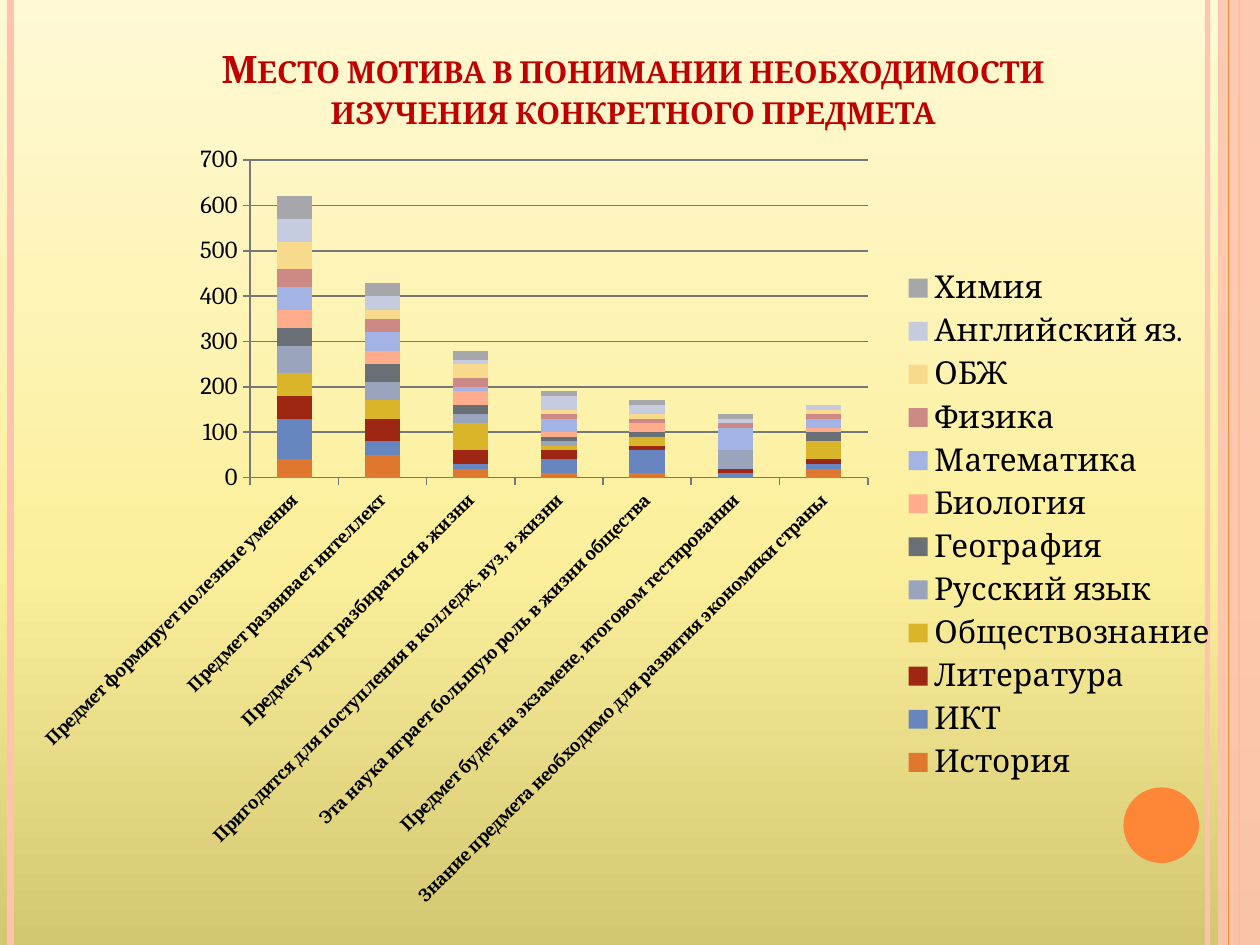
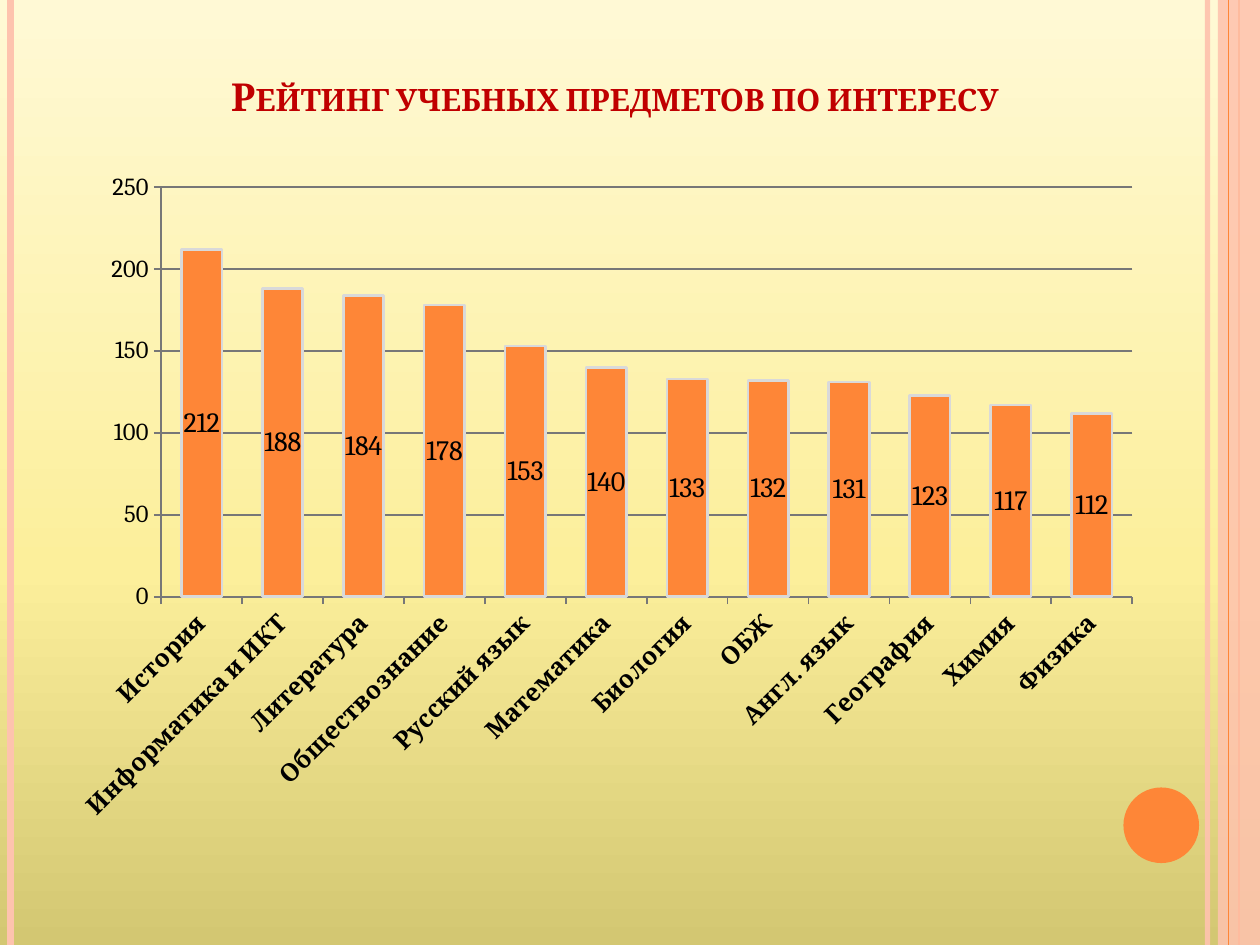
from copy import deepcopy

from pptx import Presentation
from pptx.chart.data import CategoryChartData
from pptx.dml.color import RGBColor
from pptx.enum.chart import XL_CHART_TYPE, XL_LEGEND_POSITION, XL_TICK_MARK
from pptx.enum.shapes import MSO_CONNECTOR, MSO_SHAPE
from pptx.enum.text import MSO_ANCHOR, PP_ALIGN
from pptx.oxml import parse_xml
from pptx.oxml.ns import qn
from pptx.util import Pt

STACKED = XL_CHART_TYPE.COLUMN_STACKED
LEGEND_RIGHT = XL_LEGEND_POSITION.RIGHT
TICK_OUTSIDE = XL_TICK_MARK.OUTSIDE
STRAIGHT = MSO_CONNECTOR.STRAIGHT
RECTANGLE, OVAL = MSO_SHAPE.RECTANGLE, MSO_SHAPE.OVAL
BOTTOM, CENTER = MSO_ANCHOR.BOTTOM, PP_ALIGN.CENTER

WIDTH, HEIGHT = 720, 540
FONT = "Cambria"
ORANGE, PEACH, RED, BLACK = "FE8637", "FEC3AE", "C00000", "000000"
GRID, BAR_EDGE = "777777", "D9D9D9"
BACKGROUND = [(0, "D3C772"), (0.4, "FCEF9B"), (1, "FFF9D5")]
CHART_NAMESPACE = "http://schemas.openxmlformats.org/drawingml/2006/chart"

MOTIVES = [
    "Предмет формирует полезные умения",
    "Предмет развивает интеллект",
    "Предмет учит разбираться в жизни",
    "Пригодится для поступления в колледж, вуз, в жизни",
    "Эта наука играет большую роль в жизни общества",
    "Предмет будет на экзамене, итоговом тестировании",
    "Знание предмета необходимо для развития экономики страны",
]
MOTIVE_SERIES = [
    ("История", [40, 50, 20, 10, 10, 0, 20], "E0772F"),
    ("ИКТ", [90, 30, 10, 30, 50, 10, 10], "6786BF"),
    ("Литература", [50, 50, 30, 20, 10, 10, 10], "9E2714"),
    ("Обществознание", [50, 40, 60, 10, 20, 0, 40], "DAB52A"),
    ("Русский язык", [60, 40, 20, 10, 0, 40, 0], "9AA5BD"),
    ("География", [40, 40, 20, 10, 10, 0, 20], "6A6E75"),
    ("Биология", [40, 30, 30, 10, 20, 0, 10], "FFAC8C"),
    ("Математика", [50, 40, 10, 30, 0, 50, 20], "A3B4E4"),
    ("Физика", [40, 30, 20, 10, 10, 10, 10], "CC8985"),
    ("ОБЖ", [60, 20, 30, 10, 10, 0, 10], "F7DA8C"),
    ("Английский яз.", [50, 30, 10, 30, 20, 10, 10], "C5CCE0"),
    ("Химия", [50, 30, 20, 10, 10, 10, 0], "A5A7AB"),
]
RATING = {
    "История": 212, "Информатика и ИКТ": 188, "Литература": 184,
    "Обществознание": 178, "Русский язык": 153, "Математика": 140,
    "Биология": 133, "ОБЖ": 132, "Англ. язык": 131,
    "География": 123, "Химия": 117, "Физика": 112,
}


def color(value):
    return RGBColor.from_string(value)


def apply(target, formats):
    for name, value in formats.items():
        setattr(target, name, value)


def set_font(font, size, bold=False, value=BLACK):
    apply(font, {"name": FONT, "size": Pt(size), "bold": bold})
    font.color.rgb = color(value)


def set_line(line, value, width):
    line.fill.solid()
    line.fill.fore_color.rgb = color(value)
    line.width = Pt(width)


def set_alpha(fill, percent):
    fill.fore_color.rgb = color(PEACH)
    tint = fill._xPr.find(".//" + qn("a:srgbClr"))
    tint.makeelement
    alpha = tint.makeelement(qn("a:alpha"), {"val": str(percent * 1000)})
    tint.append(alpha)


def add_vertical_line(slide, left, value, width):
    line = slide.shapes.add_connector(STRAIGHT, Pt(left), 0, Pt(left), Pt(HEIGHT))
    set_line(line.line, value, width)
    properties = line.element.spPr
    properties.append(properties.makeelement(qn("a:effectLst"), {}))
    return line


def add_plain_shape(slide, kind, box, value):
    shape = slide.shapes.add_shape(kind, *map(Pt, box))
    shape.shadow.inherit = False
    shape.fill.solid()
    shape.fill.fore_color.rgb = color(value)
    shape.line.fill.background()
    return shape


def paint_background(master):
    fill = master.background.fill
    fill.gradient()
    fill.gradient_angle = 90
    stop_list = master.element.find(".//" + qn("a:gsLst"))
    stop_list.append(deepcopy(stop_list[-1]))
    for stop, (position, value) in zip(fill.gradient_stops, BACKGROUND):
        stop.position = position
        stop.color.rgb = color(value)


def decorate_master(master, slide):
    paint_background(master)
    inner_line = add_vertical_line(slide, 690, PEACH, 3)
    set_alpha(inner_line.line.fill, 93)
    left_line = add_vertical_line(slide, 6, PEACH, 4.5)
    edge_line = add_vertical_line(slide, 708, ORANGE, 1.5)
    band = add_plain_shape(slide, RECTANGLE, (696, 0, 24, HEIGHT), PEACH)
    set_alpha(band.fill, 87)
    band_line = add_vertical_line(slide, 702, ORANGE, 0.75)
    circle = add_plain_shape(slide, OVAL, (642, 450, 43.2, 43.2), ORANGE)
    decorations = [inner_line, left_line, edge_line, band, band_line, circle]
    for index, shape in enumerate(decorations):
        shape.element.find(".//" + qn("p:cNvPr")).set("id", str(100 + index))
        master.element.cSld.spTree.insert(2 + index, shape.element)


def place_title(slide, box, text, size, side_margin, bottom_margin):
    title = slide.shapes.title
    apply(title, dict(zip(("left", "top", "width", "height"), map(Pt, box))))
    frame = title.text_frame
    frame.text = text
    apply(frame, {
        "word_wrap": True, "vertical_anchor": BOTTOM,
        "margin_left": Pt(side_margin), "margin_right": Pt(side_margin),
        "margin_bottom": Pt(bottom_margin),
    })
    paragraph = frame.paragraphs[0]
    apply(paragraph, {"alignment": CENTER, "line_spacing": 0.9})
    run = paragraph.runs[0]
    set_font(run.font, size, True, RED)
    run.font._element.set("cap", "small")


def set_plot_box(chart, box):
    plot_area = chart._chartSpace.find(".//" + qn("c:plotArea"))
    for layout in plot_area.findall(qn("c:layout")):
        plot_area.remove(layout)
    modes = "".join(f'<c:{axis}Mode val="edge"/>' for axis in "xy")
    sizes = "".join(f'<c:{name} val="{value}"/>' for name, value in zip("xywh", box))
    plot_area.insert(0, parse_xml(
        f'<c:layout xmlns:c="{CHART_NAMESPACE}"><c:manualLayout>'
        f'<c:layoutTarget val="inner"/>{modes}{sizes}'
        '</c:manualLayout></c:layout>'))


def format_axes(chart, category_size, maximum, step):
    for axis, size, bold in ((chart.category_axis, category_size, True),
                             (chart.value_axis, 14, False)):
        axis.major_tick_mark = TICK_OUTSIDE
        set_font(axis.tick_labels.font, size, bold)
        set_line(axis.format.line, GRID, 1)
    labels = chart.category_axis._element.find(qn("c:txPr"))
    labels.find(qn("a:bodyPr")).set("rot", "-2700000")
    apply(chart.value_axis, {"minimum_scale": 0, "maximum_scale": maximum,
                             "major_unit": step, "has_major_gridlines": True})
    set_line(chart.value_axis.major_gridlines.format.line, GRID, 1)


def add_column_chart(slide, box, categories, series_list, plot_box, gap):
    data = CategoryChartData()
    data.categories = categories
    for name, values, _ in series_list:
        data.add_series(name, values)
    chart = slide.shapes.add_chart(STACKED, *map(Pt, box), data).chart
    apply(chart, {"has_title": False, "has_legend": False})
    set_font(chart.font, 18)
    plot = chart.plots[0]
    apply(plot, {"gap_width": gap, "overlap": 100, "vary_by_categories": False})
    for series, (_, _, value) in zip(plot.series, series_list):
        series.format.fill.solid()
        series.format.fill.fore_color.rgb = color(value)
    set_plot_box(chart, plot_box)
    return chart


def build_motives(slide):
    place_title(slide, (67.7, 22.3, 588.2, 56.9),
                "Место мотива в понимании необходимости изучения конкретного предмета",
                21.6, 36, 3.6)
    chart = add_column_chart(slide, (11.5, 73.4, 691.9, 453.6), MOTIVES,
                             MOTIVE_SERIES, (0.19, 0.04, 0.51, 0.4), 150)
    format_axes(chart, 10, 700, 100)
    chart.has_legend = True
    apply(chart.legend, {"position": LEGEND_RIGHT, "include_in_layout": False})
    set_font(chart.legend.font, 18)


def build_rating(slide):
    place_title(slide, (39.6, 38.9, 623.5, 56.9),
                "Рейтинг учебных предметов по интересу", 22, 7.2, 27)
    chart = add_column_chart(slide, (36, 90, 623.5, 425.5), list(RATING),
                             [("Series 1", list(RATING.values()), ORANGE)],
                             (0.09, 0.04, 0.89, 0.55), 100)
    format_axes(chart, 14, 250, 50)
    plot = chart.plots[0]
    set_line(plot.series[0].format.line, BAR_EDGE, 1.5)
    plot.has_data_labels = True
    plot.data_labels.show_value = True
    set_font(plot.data_labels.font, 16)


def main():
    presentation = Presentation()
    apply(presentation, {"slide_width": Pt(WIDTH), "slide_height": Pt(HEIGHT)})
    title_only = presentation.slide_layouts[5]
    motives, rating = (presentation.slides.add_slide(title_only) for _ in range(2))
    decorate_master(presentation.slide_master, motives)
    build_motives(motives)
    build_rating(rating)
    presentation.save("out.pptx")


if __name__ == "__main__":
    main()
